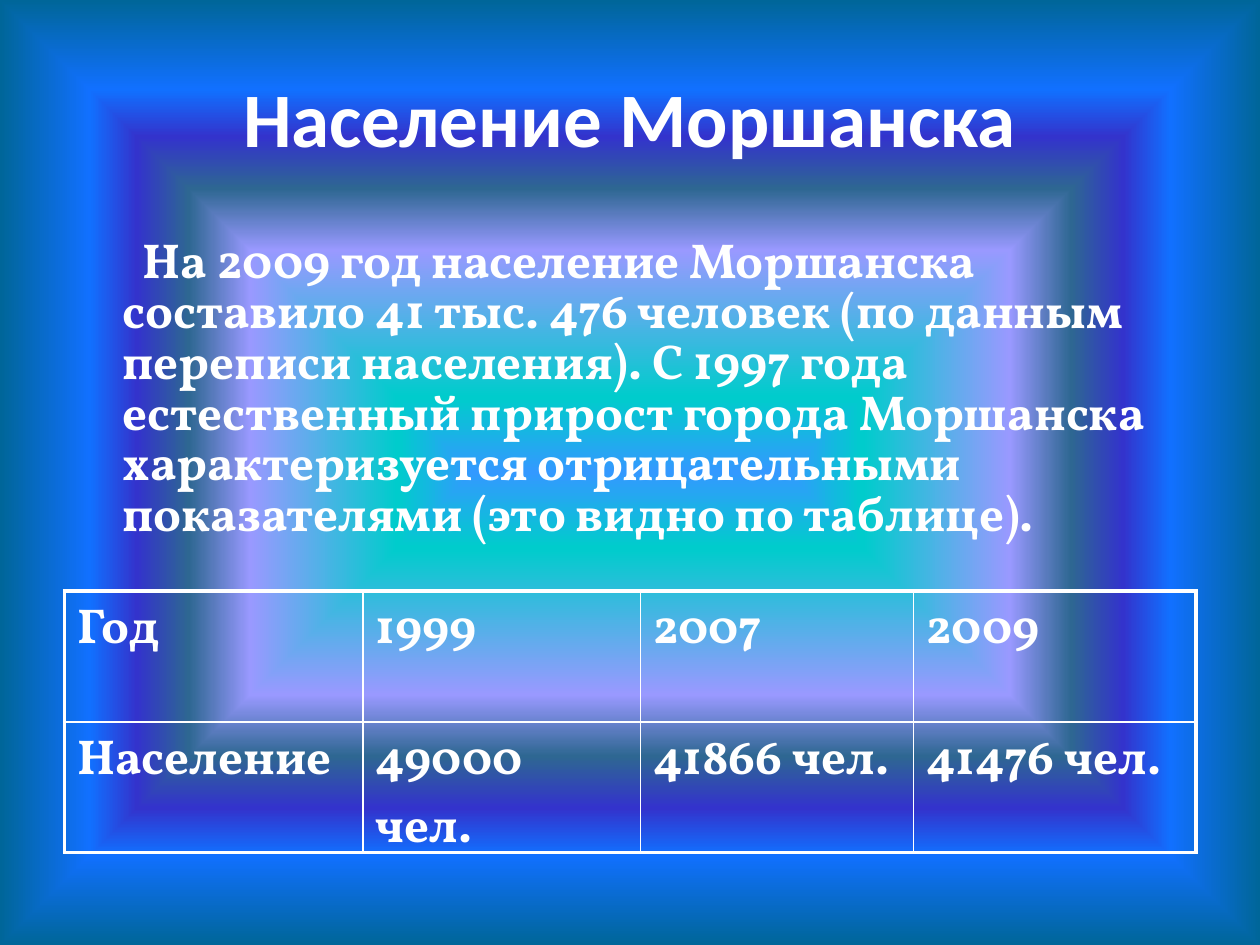
from dataclasses import dataclass

from pptx import Presentation
from pptx.dml.color import RGBColor
from pptx.enum import text
from pptx.oxml import parse_xml
from pptx.oxml.ns import nsdecls
from pptx.util import Cm, Pt

COLORS = {
    "text": "FFFFFF",
    "border": "FFFFFF",
    "center": "3399FF",
    "turquoise": "00CCCC",
    "lilac": "9999FF",
    "slate": "2E6792",
    "indigo": "3333CC",
    "azure": "1170FF",
    "edge": "006699",
}
GRADIENT = {"center": 0, "turquoise": 16, "lilac": 47, "slate": 60,
            "indigo": 71, "azure": 81, "edge": 100}
HEADING_FONT, BODY_FONT = "Calibri", "Vollkorn"
OUTER_PT, INNER_PT = 2.25, 1

BODY = ("На 2009 год население Моршанска составило 41 тыс. 476 человек "
        "(по данным переписи населения). С 1997 года естественный прирост "
        "города Моршанска характеризуется отрицательными показателями "
        "(это видно по таблице).")


@dataclass
class Column:
    width: float
    year: str
    population: str


COLUMNS = [
    Column(6.02, "Год", "Население"),
    Column(5.59, "1999", "49000 чел."),
    Column(5.51, "2007", "41866 чел."),
    Column(5.69, "2009", "41476 чел."),
]
ROW_HEIGHT = 2.64


def add_run(p, content: str, font: str, size: float) -> None:
    r = p.add_run()
    r.text = content
    r.font.name = font
    r.font.size = Pt(size)
    r.font.bold = True
    r.font.color.rgb = RGBColor.from_string(COLORS["text"])


def set_background(s) -> None:
    """Fill the slide with a rectangular gradient spreading from its centre."""
    stops = "".join(
        f'<a:gs pos="{pos * 1000}"><a:srgbClr val="{COLORS[name]}"/></a:gs>'
        for name, pos in GRADIENT.items())
    s._element.cSld.insert(0, parse_xml(
        f'<p:bg {nsdecls("p", "a")}><p:bgPr><a:gradFill rotWithShape="1">'
        f'<a:gsLst>{stops}</a:gsLst><a:path path="shape">'
        '<a:fillToRect l="50000" t="50000" r="50000" b="50000"/></a:path>'
        '</a:gradFill><a:effectLst/></p:bgPr></p:bg>'))


def add_title(s, content: str) -> None:
    sp = s.shapes.title
    sp.left, sp.top, sp.width, sp.height = Cm(1.27), Cm(0.76), Cm(22.86), Cm(3.18)
    tf = sp.text_frame
    tf.vertical_anchor = text.MSO_ANCHOR.MIDDLE
    p = tf.paragraphs[0]
    p.alignment = text.PP_ALIGN.CENTER
    add_run(p, content, HEADING_FONT, 44)


def add_body(s, content: str) -> None:
    sp = s.shapes.add_textbox(Cm(1.27), Cm(4.67), Cm(22.86), Cm(7.2))
    tf = sp.text_frame
    tf.word_wrap = True
    p = tf.paragraphs[0]
    p.line_spacing = 0.86
    pPr = p._p.get_or_add_pPr()
    pPr.set("marL", str(Cm(0.95)))
    pPr.set("indent", str(Cm(0.41)))
    add_run(p, content, BODY_FONT, 28)


def set_borders(cell, widths: dict[str, float]) -> None:
    """Draw the cell's sides; widths are in points, keyed L, R, T, B in that order."""
    tcPr = cell._tc.get_or_add_tcPr()
    for i, (side, width) in enumerate(widths.items()):
        tcPr.insert(i, parse_xml(
            f'<a:ln{side} {nsdecls("a")} w="{Pt(width)}"><a:solidFill>'
            f'<a:srgbClr val="{COLORS["border"]}"/></a:solidFill></a:ln{side}>'))


def add_population_table(s, columns: list[Column]) -> None:
    rows = [[c.year for c in columns], [c.population for c in columns]]
    last_row, last_col = len(rows) - 1, len(columns) - 1
    table = s.shapes.add_table(
        len(rows), len(columns), Cm(1.3), Cm(11.91),
        Cm(sum(c.width for c in columns)), Cm(ROW_HEIGHT * len(rows))).table
    table.first_row = table.horz_banding = False
    for col, column in zip(table.columns, columns):
        col.width = Cm(column.width)
    for i, values in enumerate(rows):
        table.rows[i].height = Cm(ROW_HEIGHT)
        for j, value in enumerate(values):
            cell = table.cell(i, j)
            cell.fill.background()
            outer = {"L": j == 0, "R": j == last_col, "T": i == 0, "B": i == last_row}
            set_borders(cell, {side: OUTER_PT if is_outer else INNER_PT
                               for side, is_outer in outer.items()})
            add_run(cell.text_frame.paragraphs[0], value, BODY_FONT, 28)


def main() -> None:
    prs = Presentation()
    prs.slide_width, prs.slide_height = Cm(25.4), Cm(19.05)
    s = prs.slides.add_slide(prs.slide_layouts.get_by_name("Title Only"))
    set_background(s)
    add_title(s, "Население Моршанска")
    add_body(s, BODY)
    add_population_table(s, COLUMNS)
    prs.save("out.pptx")


if __name__ == "__main__":
    main()
